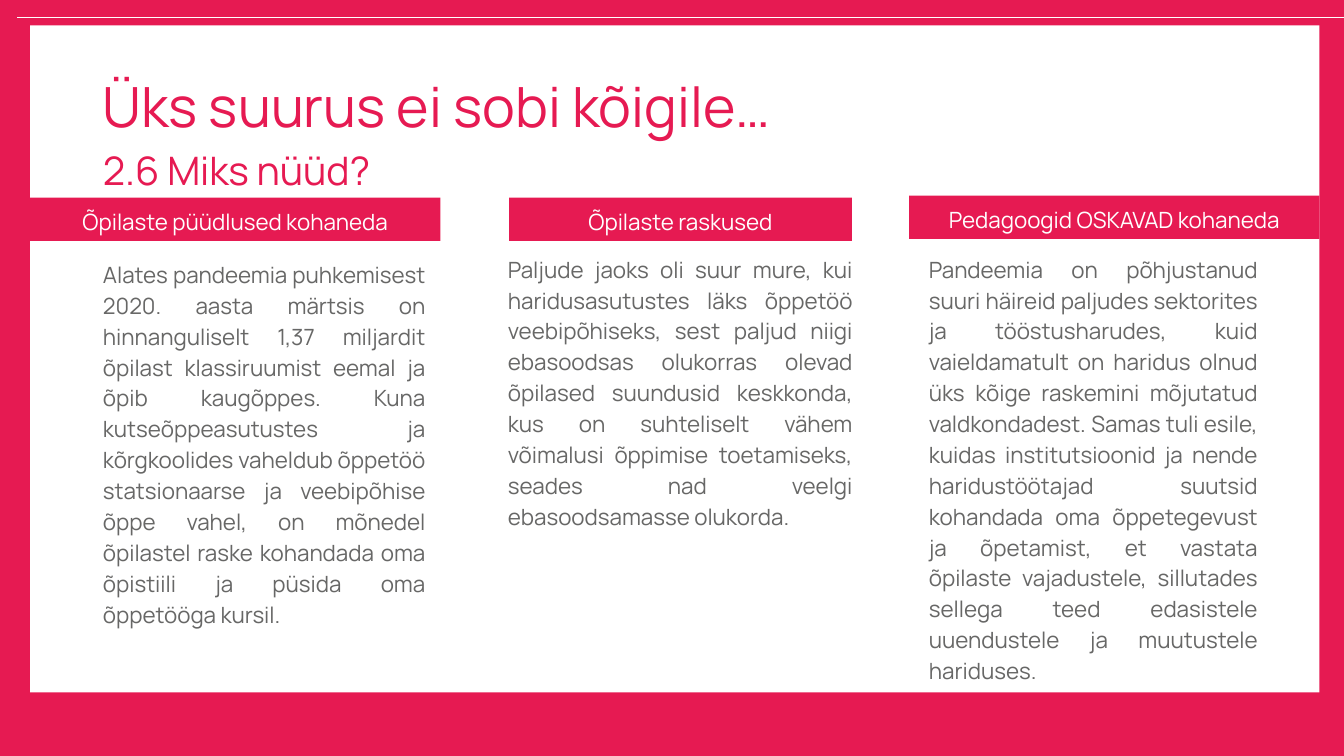
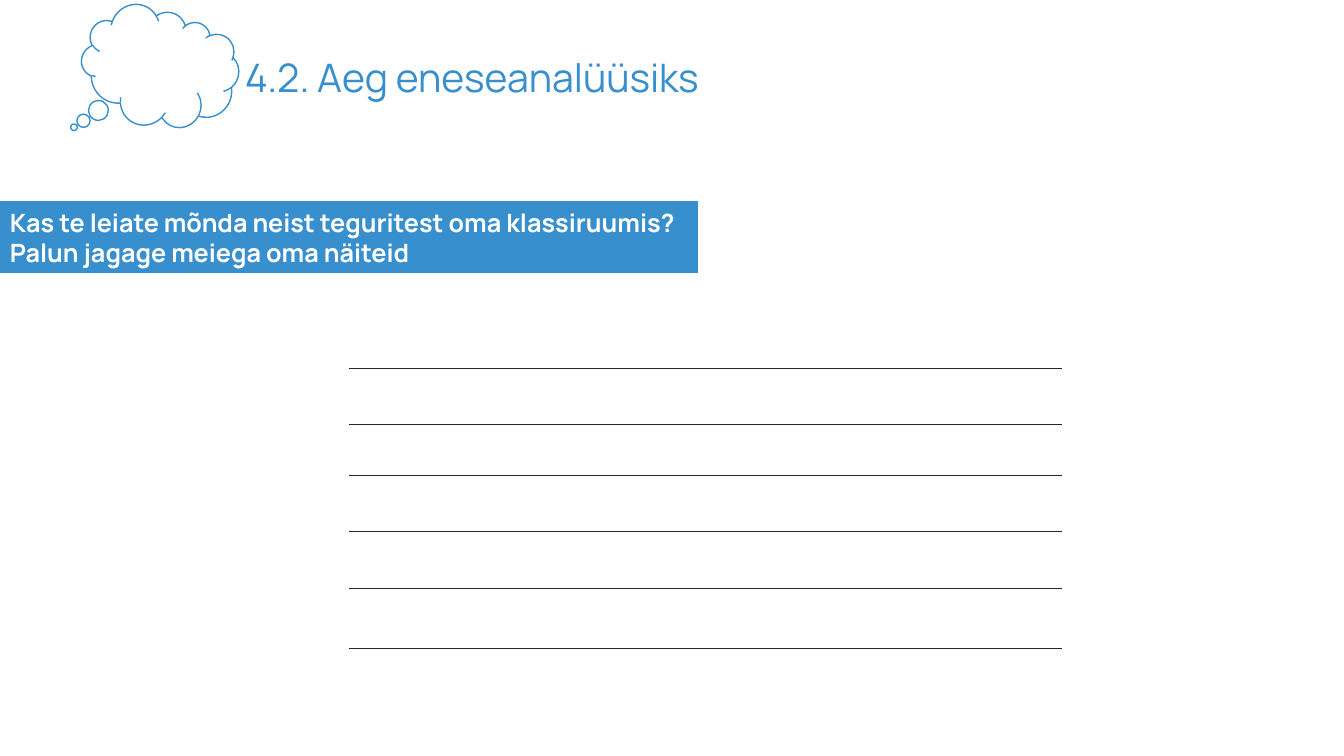
"""Build two training slides: three columns of findings and a reflection page."""
from dataclasses import dataclass

from lxml import etree
from pptx import Presentation
from pptx import util as u
from pptx.dml.color import RGBColor
from pptx.enum import shapes, text
from pptx.oxml import ns


@dataclass(frozen=True)
class Theme:
    """Colours, font and type sizes shared by the slides."""
    font: str = "Manrope"
    crimson: str = "E61A52"
    blue: str = "378FCD"
    grey: str = "676766"
    white: str = "FFFFFF"
    ink: str = "262626"
    headline: float = 39.6
    subtitle: float = 28
    prompt: float = 18
    body: float = 16
    spacing: float = 1.15


THEME = Theme()
LEFT, CENTER, JUSTIFY = (text.PP_ALIGN.LEFT, text.PP_ALIGN.CENTER,
                         text.PP_ALIGN.JUSTIFY)
TOP, MIDDLE = text.MSO_ANCHOR.TOP, text.MSO_ANCHOR.MIDDLE

COLUMNS = (
    ((0.76, 4.98, 10.34, 1.09), "Õpilaste püüdlused kohaneda",
     (2.34, 6.35, 8.64, 12.09),
     "Alates pandeemia puhkemisest 2020. aasta märtsis on hinnanguliselt "
     "1,37 miljardit õpilast klassiruumist eemal ja õpib kaugõppes. Kuna "
     "kutseõppeasutustes ja kõrgkoolides vaheldub õppetöö statsionaarse ja "
     "veebipõhise õppe vahel, on mõnedel õpilastel raske kohandada oma "
     "õpistiili ja püsida oma õppetööga kursil."),
    ((12.83, 4.98, 8.64, 1.09), "Õpilaste raskused",
     (12.55, 6.22, 9.19, 12.09),
     "Paljude jaoks oli suur mure, kui haridusasutustes läks õppetöö "
     "veebipõhiseks, sest paljud niigi ebasoodsas olukorras olevad õpilased "
     "suundusid keskkonda, kus on suhteliselt vähem võimalusi õppimise "
     "toetamiseks, seades nad veelgi ebasoodsamasse olukorda."),
    ((22.91, 4.93, 10.34, 1.09), "Pedagoogid OSKAVAD kohaneda",
     (23.16, 6.22, 8.79, 12.09),
     "Pandeemia on põhjustanud suuri häireid paljudes sektorites ja "
     "tööstusharudes, kuid vaieldamatult on haridus olnud üks kõige raskemini "
     "mõjutatud valdkondadest. Samas tuli esile, kuidas institutsioonid ja "
     "nende haridustöötajad suutsid kohandada oma õppetegevust ja õpetamist, "
     "et vastata õpilaste vajadustele, sillutades sellega teed edasistele "
     "uuendustele ja muutustele hariduses."),
)
ANSWER_LINES = (9.27, 10.69, 11.99, 13.39, 14.83, 16.33)


def colour(value):
    """Return an RGB colour from its hex form."""
    return RGBColor.from_string(value)


def place(shape, box):
    """Move and size a shape by left, top, width and height in centimetres."""
    shape.left, shape.top, shape.width, shape.height = map(u.Cm, box)


def write(shape, runs, align=LEFT, anchor=TOP, spacing=THEME.spacing):
    """Write one paragraph of (text, size, colour, bold) runs, a line each."""
    frame = shape.text_frame
    frame.word_wrap = True
    frame.auto_size = text.MSO_AUTO_SIZE.NONE
    frame.vertical_anchor = anchor
    paragraph = frame.paragraphs[0]
    paragraph.alignment = align
    paragraph.line_spacing = spacing
    paragraph.space_before = u.Pt(0)
    for index, (words, size, hue, bold) in enumerate(runs):
        if index:
            paragraph.add_line_break()
        run = paragraph.add_run()
        run.text = words
        run.font.name = THEME.font
        run.font.size = u.Pt(size)
        run.font.bold = bold
        run.font.color.rgb = colour(hue)
    return paragraph


def remove_bullet(paragraph):
    """Turn a list paragraph into plain, unindented text."""
    properties = paragraph._p.get_or_add_pPr()
    properties.set("marL", "0")
    properties.set("indent", "0")
    etree.SubElement(properties, ns.qn("a:buNone"))


def add_title(slide, box, runs, spacing=THEME.spacing):
    """Place and fill the title placeholder."""
    place(slide.shapes.title, box)
    write(slide.shapes.title, runs, anchor=MIDDLE, spacing=spacing)


def add_block(slide, box, fill, outline=None, width=0.75,
              preset=shapes.MSO_SHAPE.RECTANGLE):
    """Add a filled preset shape, outlined if a line colour is given."""
    shape = slide.shapes.add_shape(preset, *map(u.Cm, box))
    shape.shadow.inherit = False
    shape.fill.solid()
    shape.fill.fore_color.rgb = colour(fill)
    if outline:
        shape.line.color.rgb = colour(outline)
        shape.line.width = u.Pt(width)
    else:
        shape.line.fill.background()
    return shape


def add_rule(slide, left, right, top, hue, width):
    """Add a horizontal line."""
    rule = slide.shapes.add_connector(
        shapes.MSO_CONNECTOR.STRAIGHT,
        u.Cm(left), u.Cm(top), u.Cm(right), u.Cm(top))
    rule.line.color.rgb = colour(hue)
    rule.line.width = u.Pt(width)
    etree.SubElement(rule._element.spPr, ns.qn("a:effectLst"))


def add_columns_slide(presentation):
    """Add the framed slide with three headed columns."""
    slide = presentation.slides.add_slide(presentation.slide_layouts[1])
    slide.background.fill.solid()
    slide.background.fill.fore_color.rgb = colour(THEME.crimson)
    panel = add_block(slide, (0.76, 0.64, 32.49, 16.81), THEME.white)
    slide.shapes._spTree.insert(2, panel._element)
    add_title(slide, (2.34, 1.45, 29.21, 3.53), (
        ("Üks suurus ei sobi kõigile…", THEME.headline, THEME.crimson, False),
        ("2.6 Miks nüüd?", THEME.subtitle, THEME.crimson, False)))
    for index, (band_box, heading, body_box, words) in enumerate(COLUMNS):
        if index:
            body = slide.shapes.add_textbox(*map(u.Cm, body_box))
        else:
            body = slide.placeholders[1]
            place(body, body_box)
        paragraph = write(
            body, [(words, THEME.body, THEME.grey, False)], JUSTIFY)
        remove_bullet(paragraph)
        band = add_block(slide, band_box, THEME.crimson)
        write(band, [(heading, THEME.body, THEME.white, False)], CENTER, MIDDLE)
    add_rule(slide, 0.43, 33.87, 0.43, THEME.white, 0.25)


def add_reflection_slide(presentation):
    """Add the slide with a question and lines for answers."""
    slide = presentation.slides.add_slide(presentation.slide_layouts[5])
    add_title(slide, (5.92, 0.18, 21.69, 3.68), [
        ("4.2. Aeg eneseanalüüsiks", THEME.subtitle, THEME.blue, False)], 0.9)
    cloud = add_block(slide, (2.06, 0.23, 3.91, 3), THEME.white, THEME.blue, 1,
                      shapes.MSO_SHAPE.CLOUD_CALLOUT)
    cloud.adjustments[0], cloud.adjustments[1] = -0.31, 0.77
    cloud.rotation = 27.8
    band = add_block(slide, (0, 5.08, 17.58, 1.8), THEME.blue, THEME.blue)
    write(band, [("Kas te leiate mõnda neist teguritest oma klassiruumis? "
                  "Palun jagage meiega oma näiteid",
                  THEME.prompt, THEME.white, True)], anchor=MIDDLE, spacing=1.0)
    for top in ANSWER_LINES:
        add_rule(slide, 8.79, 26.77, top, THEME.ink, 0.5)


def main():
    """Build and save the presentation."""
    presentation = Presentation()
    presentation.slide_width = u.Cm(33.87)
    presentation.slide_height = u.Cm(19.05)
    add_columns_slide(presentation)
    add_reflection_slide(presentation)
    presentation.save("out.pptx")


if __name__ == "__main__":
    main()
